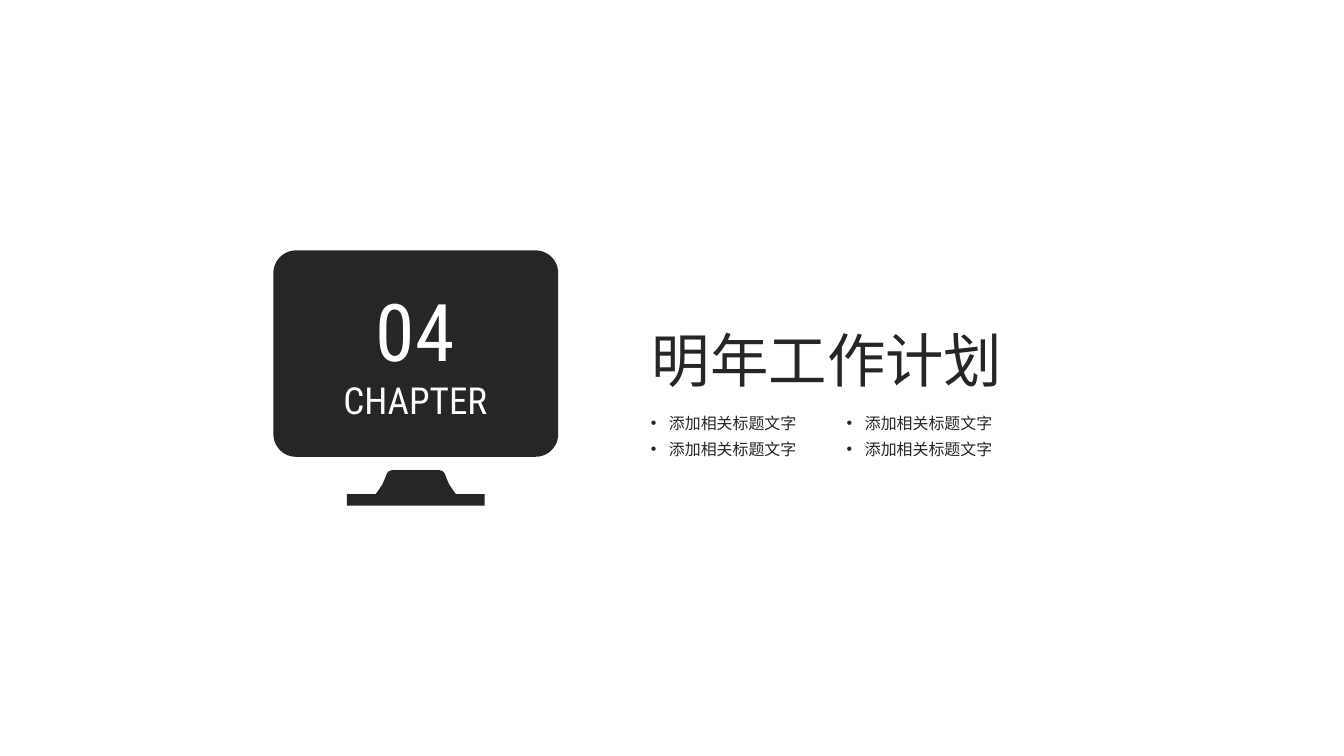
from dataclasses import dataclass

from lxml import etree
from pptx import Presentation
from pptx.dml.color import RGBColor
from pptx.enum.shapes import MSO_SHAPE
from pptx.enum.text import MSO_ANCHOR, PP_ALIGN
from pptx.oxml.ns import qn
from pptx.util import Inches, Pt

ROUNDED = MSO_SHAPE.ROUNDED_RECTANGLE
TOP, MIDDLE = MSO_ANCHOR.TOP, MSO_ANCHOR.MIDDLE
LEFT, CENTER = PP_ALIGN.LEFT, PP_ALIGN.CENTER


@dataclass(frozen=True)
class Theme:
    dark: RGBColor = RGBColor(0x26, 0x26, 0x26)
    white: RGBColor = RGBColor(0xFF, 0xFF, 0xFF)
    body_font: str = "Arial"
    number_font: str = "Roboto Condensed"
    number_size: int = 60
    title_size: int = 44
    chapter_size: int = 28
    topic_size: int = 12


theme = Theme()
prs = Presentation()
prs.slide_width, prs.slide_height = Inches(14.06), Inches(7.91)
slide = prs.slides.add_slide(prs.slide_layouts[6])


def add_text(lines, left, top, width, height, font=theme.body_font, color=theme.dark,
             align=LEFT, anchor=TOP, inset=(0, 0), wrap=True, bullet=False):
    """Place (text, size) lines, one paragraph each."""
    box = slide.shapes.add_textbox(Inches(left), Inches(top), Inches(width), Inches(height))
    frame = box.text_frame
    frame.word_wrap = wrap
    frame.vertical_anchor = anchor
    frame.margin_left = frame.margin_right = Inches(inset[0])
    frame.margin_top = frame.margin_bottom = Inches(inset[1])
    for index, (text, size) in enumerate(lines):
        paragraph = frame.add_paragraph() if index else frame.paragraphs[0]
        paragraph.alignment = align
        run = paragraph.add_run()
        run.text = text
        run.font.name, run.font.size = font, Pt(size)
        run.font.color.rgb = color
        if bullet:
            props = paragraph._p.get_or_add_pPr()
            props.set("marL", str(Inches(0.19)))
            props.set("indent", str(-Inches(0.19)))
            etree.SubElement(props, qn("a:buFont")).set("typeface", "Arial")
            etree.SubElement(props, qn("a:buChar")).set("char", "•")


def paint_dark(shape):
    shape.shadow.inherit = False
    shape.fill.solid()
    shape.fill.fore_color.rgb = theme.dark
    shape.line.fill.background()


# Monitor screen
screen = slide.shapes.add_shape(ROUNDED, Inches(2.86), Inches(2.62), Inches(2.98), Inches(2.16))
screen.adjustments[0] = 0.11
paint_dark(screen)

# Monitor stand: the left half, mirrored about the centre line
STAND_CENTER = 4.35
left_half = [(3.63, 5.29), (3.63, 5.17), (3.93, 5.17), (3.96, 5.13), (4.0, 5.07),
             (4.03, 5.0), (4.05, 4.95), (4.07, 4.93), (4.1, 4.92)]
right_half = [(2 * STAND_CENTER - x, y) for x, y in reversed(left_half)]
outline = [(Inches(x), Inches(y)) for x, y in left_half + right_half]
stand_builder = slide.shapes.build_freeform(*outline[0])
stand_builder.add_line_segments(outline[1:], close=True)
paint_dark(stand_builder.convert_to_shape())

# Chapter number on the screen
add_text([("04", theme.number_size), ("CHAPTER", theme.chapter_size)], 3.41, 2.94, 1.87, 1.48,
         font=theme.number_font, color=theme.white, align=CENTER, anchor=MIDDLE)

# Title and its grid of topics
add_text([("明年工作计划", theme.title_size)], 6.82, 3.39, 3.69, 0.74)
for row in range(2):
    for column in range(2):
        add_text([("添加相关标题文字", theme.topic_size)],
                 6.71 + 2.05 * column, 4.28 + 0.27 * row, 1.74, 0.3,
                 inset=(0.1, 0.05), wrap=False, bullet=True)

prs.save("out.pptx")
